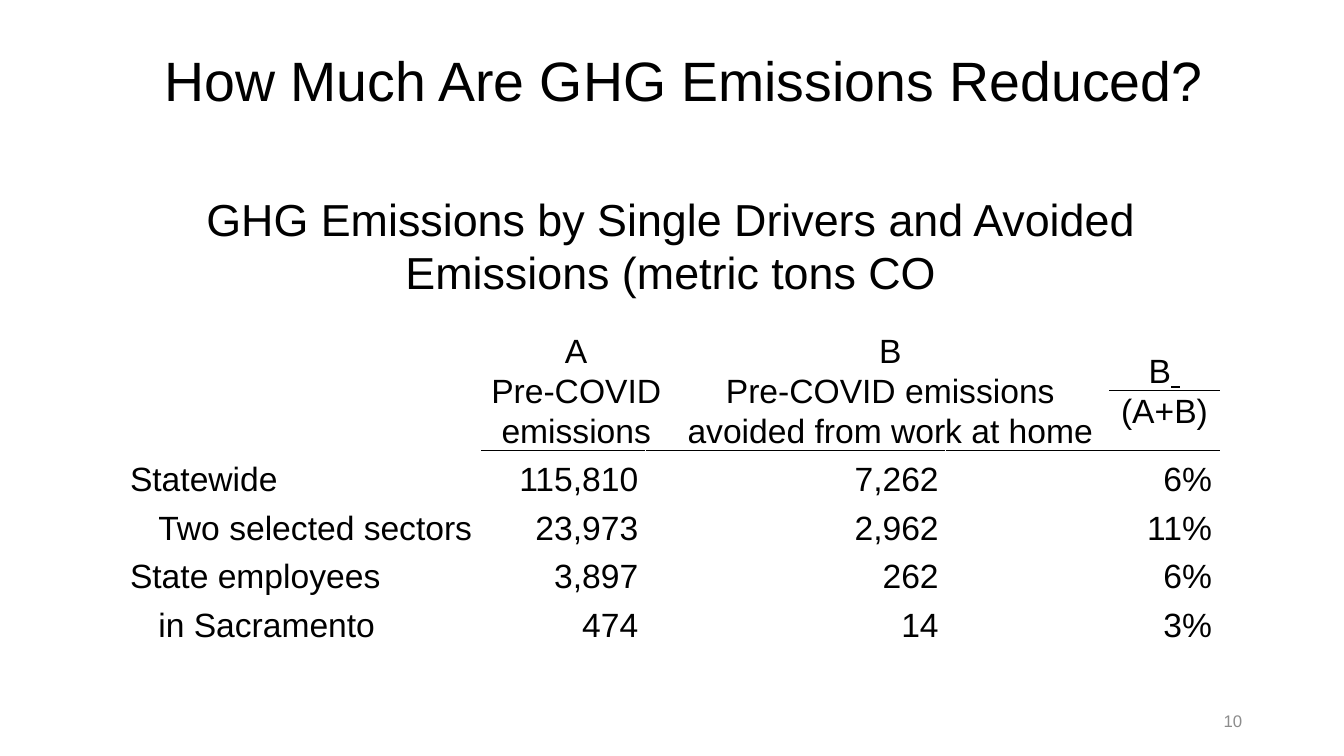
import pptx
import pptx.dml.color
import pptx.enum.text
import pptx.oxml
import pptx.oxml.ns
import pptx.util
from pptx.util import Inches

ALIGN = pptx.enum.text.PP_ALIGN
ANCHOR = pptx.enum.text.MSO_ANCHOR
BLACK = "000000"
GREY = "8C8C8C"

WIDTHS = [3.56, 1.62, 0.25, 2.73, 1.63, 1.08]
HEIGHTS = [1.4, 0.9, 0.6] + [0.48] * 4
INDENT = 0.28
# label, indent level, emissions, avoided, share
DATA = [
    ("Statewide", 0, "115,810", "7,262", "6%"),
    ("Two selected sectors", 1, "23,973", "2,962", "11%"),
    ("State employees", 0, "3,897", "262", "6%"),
    ("in Sacramento", 1, "474", "14", "3%"),
]


def color(value):
    return pptx.dml.color.RGBColor.from_string(value)


def style(para, size, tint, align, spacing):
    para.alignment = align
    para.line_spacing = spacing
    for font in [para.font] + [run.font for run in para.runs]:
        font.name = "Arial"
        font.size = pptx.util.Pt(size)
        font.color.rgb = color(tint)


def label(slide, box, text, size, tint, align, spacing):
    shape = slide.shapes.add_textbox(*map(Inches, box))
    frame = shape.text_frame
    frame.word_wrap = True
    frame.vertical_anchor = ANCHOR.MIDDLE
    frame.text = text
    style(frame.paragraphs[0], size, tint, align, spacing)


def fill_cell(cell, text, align, size=24, indent=0):
    cell.text_frame.text = text
    cell.margin_left = Inches(0.07 + indent)
    cell.margin_right = Inches(0.07)
    cell.margin_top = cell.margin_bottom = 0
    cell.vertical_anchor = ANCHOR.BOTTOM
    for para in cell.text_frame.paragraphs:
        style(para, size, BLACK, align, 1.07)


def add_run(para, text):
    run = para.add_run()
    run.text = text
    return run


def rule(cell, side):
    """Draw a thin black border on side T or B of a cell."""
    line = pptx.oxml.parse_xml(
        f'<a:ln{side} {pptx.oxml.ns.nsdecls("a")} w="12700"><a:solidFill>'
        f'<a:srgbClr val="{BLACK}"/></a:solidFill></a:ln{side}>')
    cell._tc.get_or_add_tcPr().append(line)


def rule_head(table):
    for col in range(1, 6):
        rule(table.cell(1, col), "B")
        if col == 5:
            rule(table.cell(2, col), "T")
        rule(table.cell(2, col), "B")
        rule(table.cell(3, col), "T")


def fill_head(table):
    table.cell(0, 0).merge(table.cell(0, 5))
    for first, last in [(0, 0), (1, 2), (3, 4)]:
        table.cell(1, first).merge(table.cell(2, last))

    top = table.cell(0, 0)
    top.text_frame.text = ""
    para = top.text_frame.paragraphs[0]
    fill_cell(top, "GHG Emissions by Single Drivers and Avoided "
              "Emissions (metric tons CO", ALIGN.CENTER, 32)
    low = add_run(para, "2")
    add_run(para, "e per day)")
    style(para, 32, BLACK, ALIGN.CENTER, 1.07)
    low.font._element.set("baseline", "-25000")

    fill_cell(table.cell(1, 1), "A\nPre-COVID emissions", ALIGN.CENTER)
    fill_cell(table.cell(1, 3),
              "B\nPre-COVID emissions avoided from work at home", ALIGN.CENTER)

    over = table.cell(1, 5)
    fill_cell(over, "B", ALIGN.CENTER)
    para = over.text_frame.paragraphs[0]
    add_run(para, " ").font.underline = True
    style(para, 24, BLACK, ALIGN.CENTER, 1.07)
    under = table.cell(2, 5)
    fill_cell(under, "(A+B)", ALIGN.CENTER)
    under.vertical_anchor = ANCHOR.TOP


def fill_body(table):
    for row, (name, level, *values) in enumerate(DATA, 3):
        fill_cell(table.cell(row, 0), name, ALIGN.LEFT, indent=level * INDENT)
        for col, value in zip((1, 3, 5), values):
            fill_cell(table.cell(row, col), value, ALIGN.RIGHT)


def add_grid(slide, box):
    frame = slide.shapes.add_table(len(HEIGHTS), len(WIDTHS), *map(Inches, box))
    table = frame.table
    table.first_row = table.horz_banding = False
    for column, width in zip(table.columns, WIDTHS):
        column.width = Inches(width)
    for row, height in zip(table.rows, HEIGHTS):
        row.height = Inches(height)
    rule_head(table)
    for cell in table.iter_cells():
        cell.fill.background()
    fill_head(table)
    fill_body(table)


def main():
    deck = pptx.Presentation()
    deck.slide_width = Inches(13.33)
    deck.slide_height = Inches(7.5)
    slide = deck.slides.add_slide(deck.slide_layouts[6])
    label(slide, (9.42, 6.95, 3, 0.4), "10", 12, GREY, ALIGN.RIGHT, 1.0)
    label(slide, (1.53, 0.26, 10.89, 1.14),
          "How Much Are GHG Emissions Reduced?", 39.6, BLACK, ALIGN.LEFT, 0.9)
    add_grid(slide, (1.22, 1.57, sum(WIDTHS), sum(HEIGHTS)))
    deck.save("out.pptx")


if __name__ == "__main__":
    main()
